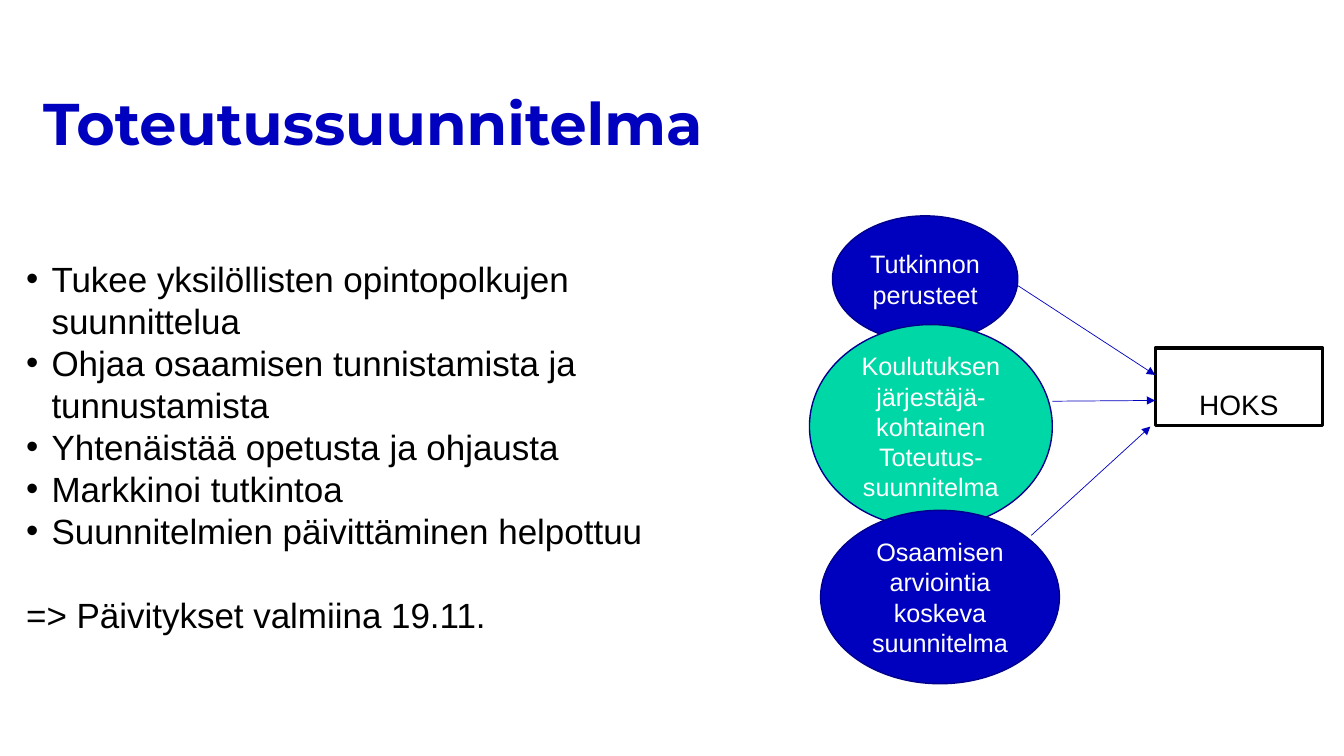
from lxml import etree
from pptx import Presentation
from pptx.dml.color import RGBColor
from pptx.enum import shapes, text
from pptx.oxml import ns
from pptx.util import Cm, Pt

BLUE = RGBColor(0x00, 0x00, 0xBF)
NAVY = RGBColor(0x00, 0x00, 0x8D)
GREEN = RGBColor(0x00, 0xD7, 0xA7)
BLACK = RGBColor(0x00, 0x00, 0x00)
WHITE = RGBColor(0xFF, 0xFF, 0xFF)

BULLETS = [
    "Tukee yksilöllisten opintopolkujen suunnittelua",
    "Ohjaa osaamisen tunnistamista ja tunnustamista",
    "Yhtenäistää opetusta ja ohjausta",
    "Markkinoi tutkintoa",
    "Suunnitelmien päivittäminen helpottuu",
]
CONCLUSION = "=> Päivitykset valmiina 19.11."

# Offsets and sizes in cm, measured from the corner of the diagram
PLANS = [
    ("Tutkinnon perusteet", BLUE, (0.58, 0, 4.67, 3.18)),
    ("Koulutuksen järjestäjä-kohtainen\nToteutus-suunnitelma", GREEN, (0, 2.74, 6.12, 5.13)),
    ("Osaamisen arviointia koskeva suunnitelma", BLUE, (0.28, 7.42, 6.02, 4.37)),
]
HOKS_BOX = (8.71, 3.33, 4.22, 1.96)
ARROWS = [
    (4.78, 1.45, 8.71, 4.01),
    (6.12, 4.67, 8.71, 4.65),
    (5.59, 8.05, 8.59, 5.31),
]


def write(frame, words, size, colour, font="Arial", bold=False, align=None):
    frame.word_wrap = True
    frame.text = words
    for para in frame.paragraphs:
        para.alignment = align
        for span in para.runs:
            span.font.name = font
            span.font.size = Pt(size)
            span.font.bold = bold
            span.font.color.rgb = colour


def add_text_area(page, left, top, width, height):
    """Add a text box without insets and return its frame."""
    frame = page.shapes.add_textbox(Cm(left), Cm(top), Cm(width), Cm(height)).text_frame
    frame.margin_left = frame.margin_top = frame.margin_right = frame.margin_bottom = 0
    return frame


def add_title(page, *box):
    frame = add_text_area(page, *box)
    write(frame, "Toteutussuunnitelma", 42, BLUE, "Montserrat", bold=True)
    frame.paragraphs[0].line_spacing = 0.9


def add_benefits(page, *box):
    frame = add_text_area(page, *box)
    write(frame, "\n".join(BULLETS + [CONCLUSION]), 25, BLACK)
    *bullets, conclusion = frame.paragraphs
    for para in bullets:
        properties = para._p.get_or_add_pPr()
        properties.set("marL", str(Cm(0.64)))
        properties.set("indent", str(-Cm(0.64)))
        etree.SubElement(properties, ns.qn("a:buFont"), typeface="Arial")
        etree.SubElement(properties, ns.qn("a:buChar"), char="•")
    conclusion.space_before = Pt(30)


def add_node(page, kind, left, top, size, line_colour, line_width):
    x, y, width, height = size
    node = page.shapes.add_shape(kind, Cm(left + x), Cm(top + y), Cm(width), Cm(height))
    node.shadow.inherit = False
    node.line.color.rgb = line_colour
    node.line.width = Pt(line_width)
    return node


def add_arrow(page, left, top, ends):
    x1, y1, x2, y2 = ends
    arrow = page.shapes.add_connector(
        shapes.MSO_CONNECTOR.STRAIGHT,
        Cm(left + x1), Cm(top + y1), Cm(left + x2), Cm(top + y2))
    arrow.line.color.rgb = BLUE
    arrow.line.width = Pt(0.5)
    etree.SubElement(arrow.line._get_or_add_ln(), ns.qn("a:tailEnd"), type="triangle")
    etree.SubElement(arrow._element.spPr, ns.qn("a:effectLst"))


def add_diagram(page, left, top):
    """Draw the three plans that lead to the HOKS box."""
    for words, colour, size in PLANS:
        plan = add_node(page, shapes.MSO_SHAPE.OVAL, left, top, size, NAVY, 1)
        plan.fill.solid()
        plan.fill.fore_color.rgb = colour
        plan.text_frame.vertical_anchor = text.MSO_ANCHOR.MIDDLE
        write(plan.text_frame, words, 18, WHITE, align=text.PP_ALIGN.CENTER)
    hoks = add_node(page, shapes.MSO_SHAPE.RECTANGLE, left, top, HOKS_BOX, BLACK, 2.25)
    hoks.fill.background()
    hoks.text_frame.vertical_anchor = text.MSO_ANCHOR.BOTTOM
    write(hoks.text_frame, "HOKS", 20, BLACK, align=text.PP_ALIGN.CENTER)
    for ends in ARROWS:
        add_arrow(page, left, top, ends)


def main():
    deck = Presentation()
    deck.slide_width, deck.slide_height = Cm(33.87), Cm(19.05)
    page = deck.slides.add_slide(deck.slide_layouts[6])
    add_title(page, 1.09, 2.39, 17.7, 3.48)
    add_benefits(page, 0.66, 6.49, 17.7, 11.23)
    add_diagram(page, 20.4, 5.44)
    deck.save("out.pptx")


if __name__ == "__main__":
    main()
